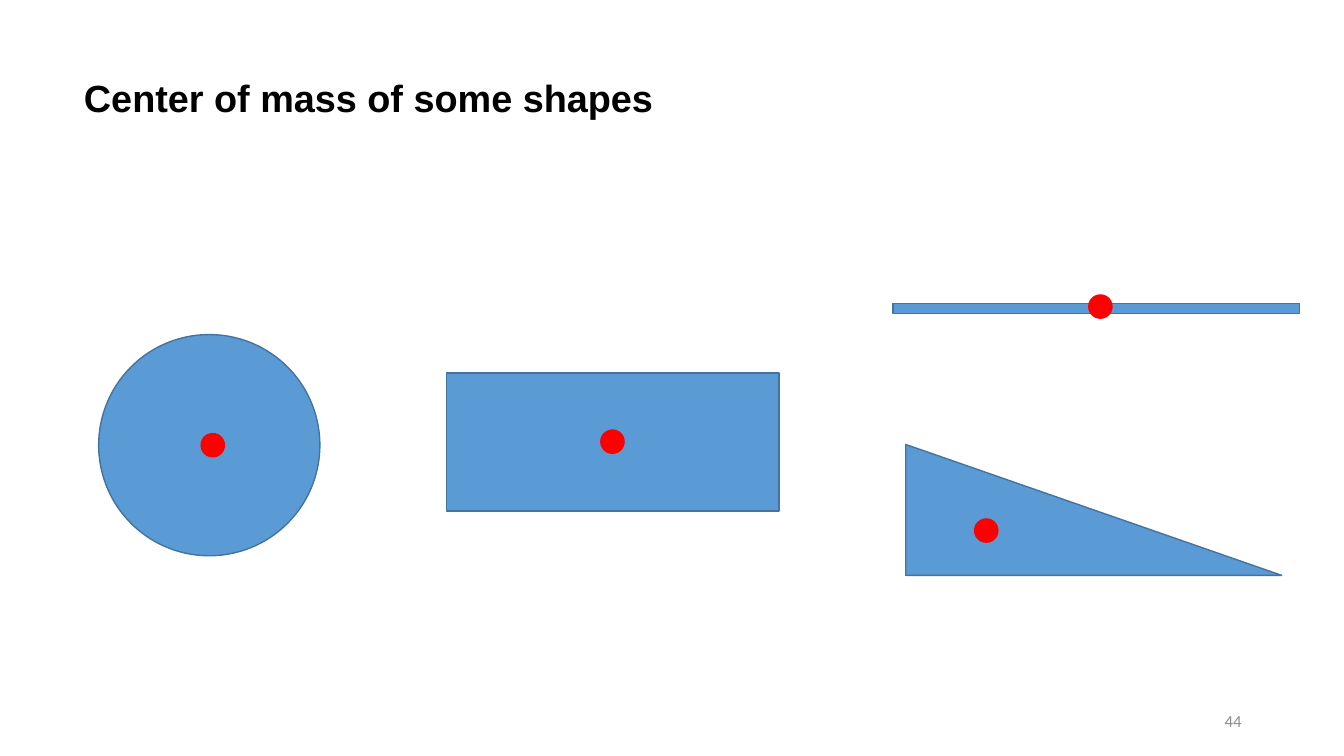
from pptx import Presentation
from pptx.dml.color import RGBColor
from pptx.enum.shapes import MSO_SHAPE
from pptx.enum.text import MSO_ANCHOR, PP_ALIGN
from pptx.util import Pt

OVAL, RECT, TRIANGLE = MSO_SHAPE.OVAL, MSO_SHAPE.RECTANGLE, MSO_SHAPE.RIGHT_TRIANGLE
LEFT, RIGHT = PP_ALIGN.LEFT, PP_ALIGN.RIGHT
MIDDLE = MSO_ANCHOR.MIDDLE


def color(value):
    return RGBColor.from_string(value)


class Deck:
    """Slide builder holding the style and the current slide."""

    BODY, EDGE, MARK = "5B9BD5", "43739E", "FF0000"
    DOT = 16.6

    def __init__(self, prs):
        self.s = prs.slides.add_slide(prs.slide_layouts[6])

    def text(self, text, box, size, font, fill, bold=False, align=LEFT, inset=0):
        tf = self.s.shapes.add_textbox(*map(Pt, box)).text_frame
        tf.word_wrap = True
        tf.vertical_anchor = MIDDLE
        tf.margin_left = tf.margin_right = Pt(inset)
        tf.margin_top = tf.margin_bottom = Pt(inset / 2)
        p = tf.paragraphs[0]
        p.text = text
        p.alignment = align
        p.font.size, p.font.name, p.font.bold = Pt(size), font, bold
        p.font.color.rgb = color(fill)

    def shape(self, kind, box, fill=BODY, line=EDGE):
        sp = self.s.shapes.add_shape(kind, *map(Pt, box))
        sp.shadow.inherit = False
        sp.fill.solid()
        sp.fill.fore_color.rgb = color(fill)
        sp.line.color.rgb = color(line)
        sp.line.width = Pt(1)

    def dot(self, x, y):
        d = self.DOT
        self.shape(OVAL, (x - d / 2, y - d / 2, d, d), self.MARK, self.MARK)


def main():
    prs = Presentation()
    prs.slide_width, prs.slide_height = Pt(960), Pt(540)
    deck = Deck(prs)
    deck.text("Center of mass of some shapes", (60, 51, 549, 37), 27, "Arial", "000000", bold=True)
    deck.text("44", (678, 500.5, 216, 28.75), 12, "Calibri", "8C8C8C", align=RIGHT, inset=7.2)
    bodies = [
        (OVAL, (70.5, 239, 158, 158)),
        (RECT, (319, 266.5, 237.5, 98.5)),
        (RECT, (638, 217, 290.5, 7)),
        (TRIANGLE, (647, 317.5, 268.5, 93.5)),
    ]
    for kind, box in bodies:
        deck.shape(kind, box)
    for x, y in [(152, 318), (437.5, 315.5), (786, 219), (704.5, 379)]:
        deck.dot(x, y)
    prs.save("out.pptx")


if __name__ == "__main__":
    main()
